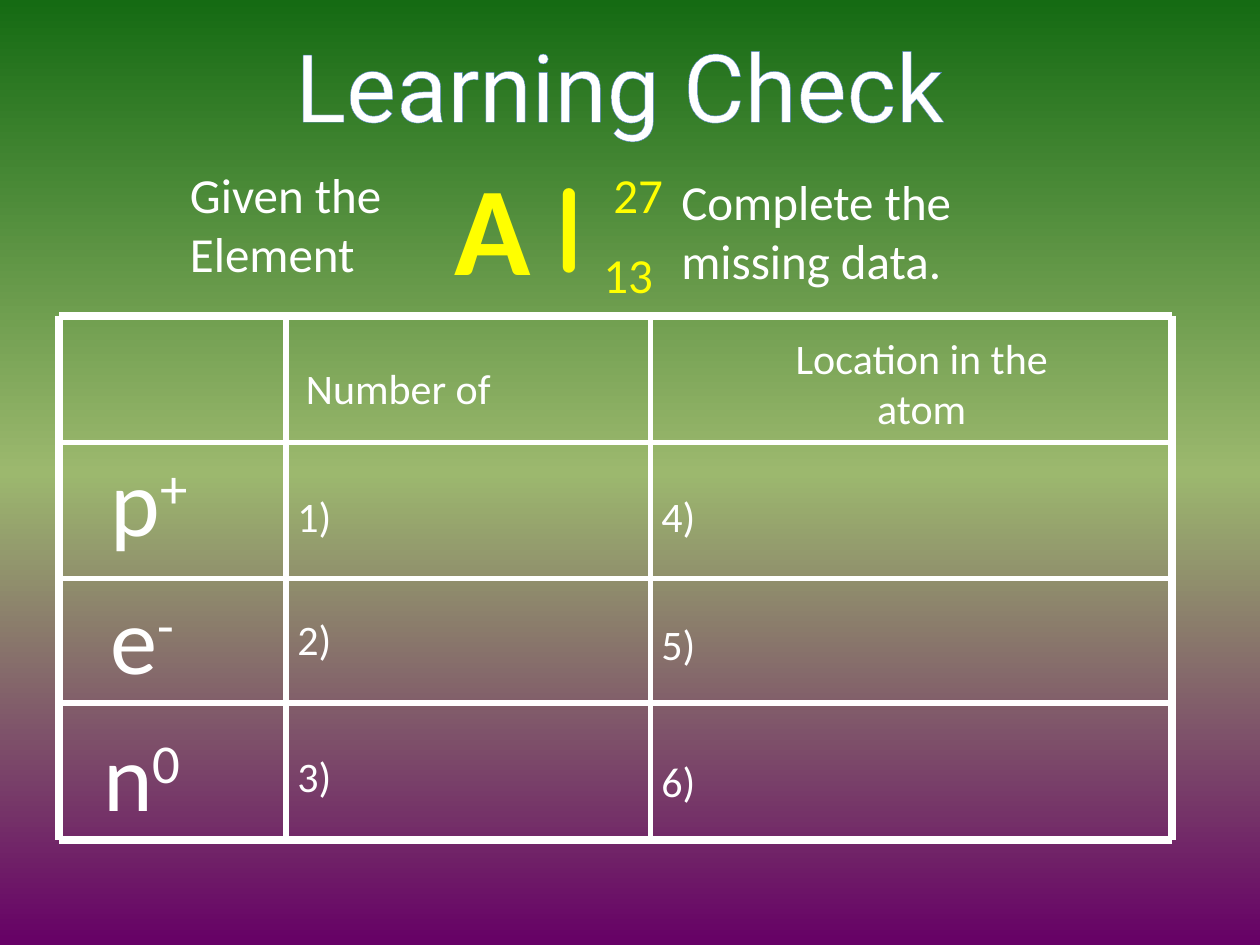
"""Build the Learning Check slide: a nuclide symbol above a ruled grid of its particles."""
from lxml.etree import SubElement
from pptx import Presentation
from pptx.dml.color import RGBColor as RGB
from pptx.enum.shapes import MSO_CONNECTOR as CONNECTOR
from pptx.enum.text import MSO_ANCHOR as ANCHOR, MSO_AUTO_SIZE as AUTO, PP_ALIGN as ALIGN
from pptx.oxml.ns import qn
from pptx.util import Inches as In, Pt

THEME = {
    "white": "FFFFFF", "yellow": "FFFF00", "blue": "4F81BD", "orange": "EB6A00",
    "stops": ((0, "660066"), (50, "9CB86E"), (100, "156B13")),
    "title": 54, "symbol": 72, "particle": 54, "prompt": 28, "cell": 24,
    "body": "Calibri", "heading": "Roboto", "letter": "Comic Neue",
    "frame": 4.5, "rule": 3,
}
TITLE = ("Learning Check", (1.76, 0.17, 6.32, 1.01))
PROMPTS = [
    (("Given the", "Element"), (1.41, 1.26, 2.03, 1.04)),
    (("Complete the", "missing data."), (5.31, 1.31, 2.73, 1.04)),
]
SYMBOL = [
    ("A", (3.2, 1.14, 1.42, 1.31), "body"),
    ("l", (4.14, 1.11, 0.75, 1.31), "letter"),
]
NUMBERS = [("13", (4.69, 1.89, 0.93, 0.57)), ("27", (4.77, 1.26, 0.93, 0.57))]
COLS = (0.47, 2.27, 5.16, 9.3)
ROWS = (2.51, 3.51, 4.59, 5.58, 6.67)
HEADS = [
    (("Number of",), (2.33, 2.83, 2.98, 0.51), ALIGN.LEFT),
    (("Location in the", "atom"), (5.39, 2.59, 3.85, 0.91), ALIGN.CENTER),
]
PARTICLES = [
    ("p", "+", (0.78, 3.46, 1.39, 1.01)),
    ("e", "-", (0.78, 4.55, 1.18, 1.01)),
    ("n", "0", (0.72, 5.64, 1.39, 1.01)),
]
ANSWERS = [
    (1, (("1)", 3.84), ("2)", 4.82), ("3)", 5.91))),
    (2, (("4)", 3.84), ("5)", 4.86), ("6)", 5.95))),
]
ANSWER_SHIFT, ANSWER_INDENT, ANSWER_SIZE = -0.08, 0.17, (0.86, 0.51)


def style(r, size, color="white", font="body", bold=False, outline=None):
    values = {"name": THEME[font], "size": Pt(THEME[size]), "bold": bold}
    for key, value in values.items():
        setattr(r.font, key, value)
    r.font.color.rgb = RGB.from_string(THEME[color])
    if outline:
        line, width = outline
        rPr = r._r.get_or_add_rPr()
        ln = SubElement(rPr, qn("a:ln"), w=str(Pt(width)))
        fill = SubElement(ln, qn("a:solidFill"))
        SubElement(fill, qn("a:srgbClr"), val=THEME[line])
        rPr.insert(0, ln)


def write(tf, lines, align=ALIGN.LEFT, wrap=False, **fmt):
    frame = {"word_wrap": wrap, "auto_size": AUTO.SHAPE_TO_FIT_TEXT,
             "vertical_anchor": ANCHOR.TOP}
    for key, value in frame.items():
        setattr(tf, key, value)
    for i, text in enumerate(lines):
        p = tf.paragraphs[0] if i == 0 else tf.add_paragraph()
        p.alignment = align
        r = p.add_run()
        r.text = text
        style(r, **fmt)


def add_text(shapes, lines, box, **fmt):
    tf = shapes.add_textbox(*map(In, box)).text_frame
    write(tf, lines, **fmt)
    return tf


def paint_background(s):
    s.background.fill.gradient()
    grad = next(s.element.iter(qn("a:gradFill")))
    stops = grad.find(qn("a:gsLst"))
    for gs in list(stops):
        stops.remove(gs)
    for pos, color in THEME["stops"]:
        gs = SubElement(stops, qn("a:gs"), pos=str(pos * 1000))
        SubElement(gs, qn("a:srgbClr"), val=color)
    grad.find(qn("a:lin")).set("ang", str(270 * 60000))


def add_title(s):
    text, box = TITLE
    sp = s.shapes.title
    for key, value in zip(("left", "top", "width", "height"), box):
        setattr(sp, key, In(value))
    write(sp.text_frame, [text], ALIGN.CENTER, size="title", font="heading",
          outline=("blue", 0.8))


def add_symbol(s):
    shapes = s.shapes.add_group_shape().shapes
    for text, box, font in SYMBOL:
        add_text(shapes, [text], box, align=ALIGN.CENTER, size="symbol",
                 color="yellow", font=font, bold=True, outline=("orange", 2.48))
    for text, box in NUMBERS:
        add_text(shapes, [text], box, size="prompt", color="yellow")


def add_line(s, ends, weight):
    cx = s.shapes.add_connector(CONNECTOR.STRAIGHT, *map(In, ends))
    cx.line.width = Pt(THEME[weight])
    cx.line.color.rgb = RGB.from_string(THEME["white"])
    SubElement(cx._element.spPr, qn("a:effectLst"))


def add_grid(s):
    for x in COLS:
        weight = "frame" if x in (COLS[0], COLS[-1]) else "rule"
        add_line(s, (x, ROWS[0], x, ROWS[-1]), weight)
    for y in ROWS:
        weight = "frame" if y in (ROWS[0], ROWS[-1]) else "rule"
        add_line(s, (COLS[0], y, COLS[-1], y), weight)


def add_entries(s):
    for name, charge, box in PARTICLES:
        tf = add_text(s.shapes, [name], box, size="particle")
        r = tf.paragraphs[0].add_run()
        r.text = charge
        style(r, "particle")
        r._r.get_or_add_rPr().set("baseline", "30000")
    for lines, box, align in HEADS:
        add_text(s.shapes, lines, box, align=align, size="cell")
    for col, answers in ANSWERS:
        for text, top in answers:
            box = (COLS[col] + ANSWER_SHIFT, top, *ANSWER_SIZE)
            tf = add_text(s.shapes, [text], box, size="cell")
            tf.margin_left = In(ANSWER_INDENT)


def main():
    prs = Presentation()
    prs.slide_width, prs.slide_height = In(10), In(7.5)
    s = prs.slides.add_slide(prs.slide_layouts[5])
    paint_background(s)
    add_title(s)
    for lines, box in PROMPTS:
        add_text(s.shapes, lines, box, wrap=True, size="prompt")
    add_symbol(s)
    add_grid(s)
    add_entries(s)
    prs.save("out.pptx")


if __name__ == "__main__":
    main()
